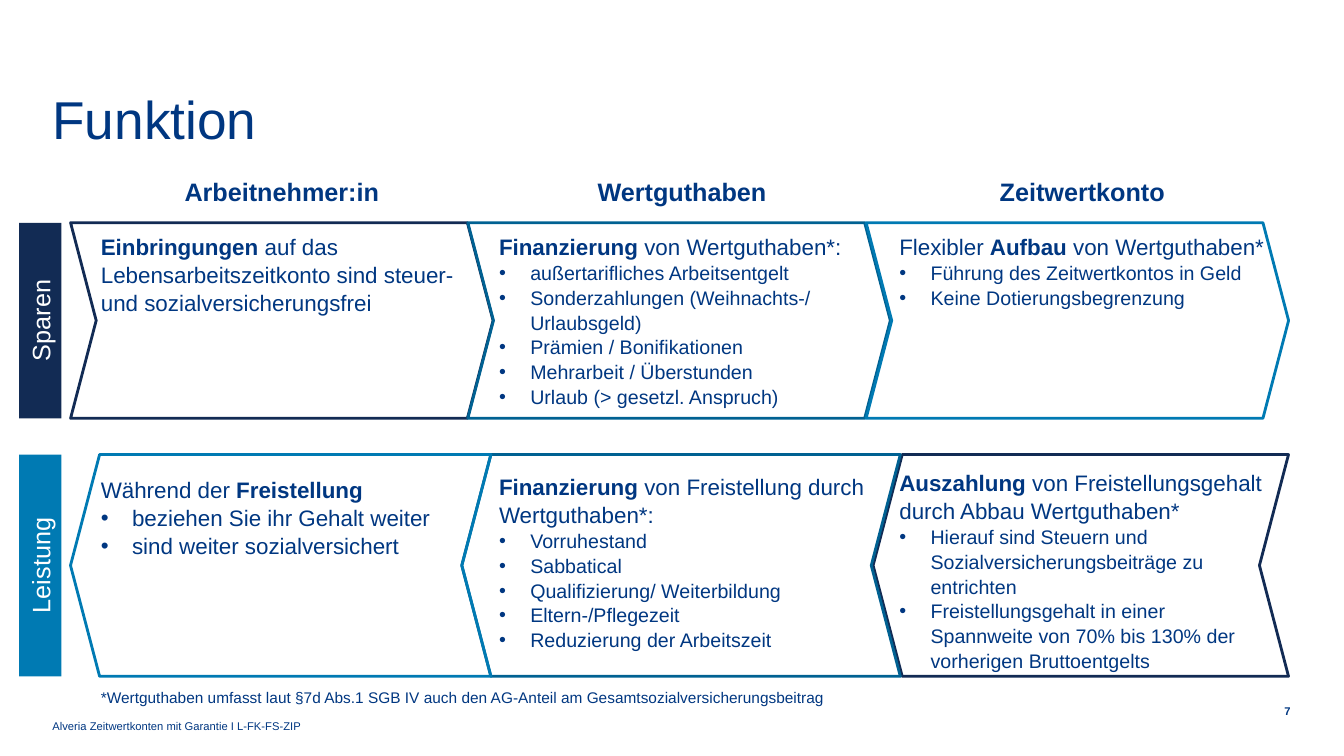
from lxml import etree
from pptx import Presentation
from pptx.dml.color import RGBColor
from pptx.enum.shapes import MSO_SHAPE
from pptx.enum.text import MSO_ANCHOR, PP_ALIGN
from pptx.oxml.ns import qn
from pptx.util import Inches, Pt

TEXT_BLUE = RGBColor(0x00, 0x37, 0x81)
NAVY = RGBColor(0x12, 0x2B, 0x54)
TEAL = RGBColor(0x00, 0x61, 0x92)
SKY = RGBColor(0x00, 0x7A, 0xB3)
WHITE = RGBColor(0xFF, 0xFF, 0xFF)
CHEVRON, RECTANGLE = MSO_SHAPE.CHEVRON, MSO_SHAPE.RECTANGLE
TOP, MIDDLE, BOTTOM = MSO_ANCHOR.TOP, MSO_ANCHOR.MIDDLE, MSO_ANCHOR.BOTTOM
LEFT, CENTER, RIGHT = PP_ALIGN.LEFT, PP_ALIGN.CENTER, PP_ALIGN.RIGHT

prs = Presentation()
prs.slide_width, prs.slide_height = Inches(13.33), Inches(7.5)
slide = prs.slides.add_slide(prs.slide_layouts[6])


def add_box(left, top, width, height, anchor=TOP):
    tf = slide.shapes.add_textbox(
        Inches(left), Inches(top), Inches(width), Inches(height)).text_frame
    tf.word_wrap = True
    tf.vertical_anchor = anchor
    tf.margin_left = tf.margin_right = tf.margin_top = tf.margin_bottom = 0
    return tf


def write(p, text, size=16, color=TEXT_BLUE, align=LEFT, spacing=1.0, bullet=False):
    p.alignment = align
    p.line_spacing = spacing
    if bullet:
        pPr = p._p.get_or_add_pPr()
        pPr.set("marL", str(Inches(0.31)))
        pPr.set("indent", str(-Inches(0.31)))
        etree.SubElement(pPr, qn("a:buFont")).set("typeface", "Arial")
        etree.SubElement(pPr, qn("a:buChar")).set("char", "•")
    for i, part in enumerate(text.split("|")):
        if part:
            r = p.add_run()
            r.text = part
            r.font.name = "Arial"
            r.font.size = Pt(size)
            r.font.bold = i % 2 == 1
            r.font.color.rgb = color


tf = add_box(0.52, 0.96, 10.2, 1.02)
write(tf.paragraphs[0], "Funktion", size=38, spacing=Pt(38))
tf = add_box(12.51, 6.97, 0.29, 0.16, anchor=MIDDLE)
write(tf.paragraphs[0], "|7|", size=8, align=RIGHT, spacing=Pt(10))

columns = [
    (1, 3.59, "Arbeitnehmer:in", [
        (2.3, "|Einbringungen| auf das Lebensarbeitszeitkonto sind steuer- "
              "und sozialversicherungsfrei", 16, []),
        (4.71, "Während der |Freistellung|", 16, [
            "beziehen Sie ihr Gehalt weiter",
            "sind weiter sozialversichert"]),
    ]),
    (4.95, 3.63, "Wertguthaben", [
        (2.3, "|Finanzierung |von Wertguthaben*:", 14, [
            "außertarifliches Arbeitsentgelt",
            "Sonderzahlungen (Weihnachts-/ Urlaubsgeld)",
            "Prämien / Bonifikationen",
            "Mehrarbeit / Überstunden",
            "Urlaub (> gesetzl. Anspruch)"]),
        (4.68, "|Finanzierung |von Freistellung durch Wertguthaben*:", 14, [
            "Vorruhestand",
            "Sabbatical",
            "Qualifizierung/ Weiterbildung",
            "Eltern-/Pflegezeit",
            "Reduzierung der Arbeitszeit"]),
    ]),
    (8.92, 3.63, "Zeitwertkonto", [
        (2.3, "Flexibler |Aufbau| von Wertguthaben*", 14, [
            "Führung des Zeitwertkontos in Geld",
            "Keine Dotierungsbegrenzung"]),
        (4.64, "|Auszahlung |von Freistellungsgehalt durch Abbau Wertguthaben*", 14, [
            "Hierauf sind Steuern und Sozialversicherungsbeiträge zu entrichten",
            "Freistellungsgehalt in einer Spannweite von 70% bis 130% der "
            "vorherigen Bruttoentgelts"]),
    ]),
]
for left, width, heading, blocks in columns:
    tf = add_box(left, 1.73, width, 0.3)
    write(tf.paragraphs[0], f"|{heading}|", size=18, align=CENTER, spacing=1.05)
    for top, lead, bullet_size, bullets in blocks:
        tf = add_box(left, top, width, 1.8)
        write(tf.paragraphs[0], lead, spacing=1.05)
        for bullet in bullets:
            write(tf.add_paragraph(), bullet, size=bullet_size, spacing=1.05, bullet=True)

rows = [
    ("Sparen", NAVY, 2.21, 1.94, False,
     [(0.7, 4.19, NAVY), (4.64, 4.19, TEAL), (8.59, 4.19, SKY)]),
    ("Leistung", SKY, 4.51, 2.2, True,
     [(8.66, 4.12, NAVY), (4.58, 4.35, TEAL), (0.7, 4.17, SKY)]),
]
label_center, label_width = 0.4, 0.42
for label, label_color, top, height, flipped, chevrons in rows:
    for left, width, color in chevrons:
        s = slide.shapes.add_shape(
            CHEVRON, Inches(left), Inches(top), Inches(width), Inches(height))
        s.shadow.inherit = False
        s.adjustments[0] = 0.131
        s.fill.background()
        s.line.color.rgb = color
        s.line.width = Pt(2)
        if flipped:
            s._element.spPr.find(qn("a:xfrm")).set("flipH", "1")

    s = slide.shapes.add_shape(
        RECTANGLE, Inches(label_center - height / 2),
        Inches(top + (height - label_width) / 2), Inches(height), Inches(label_width))
    s.rotation = 270
    s.shadow.inherit = False
    s.fill.solid()
    s.fill.fore_color.rgb = label_color
    s.line.fill.background()
    s.text_frame.vertical_anchor = MIDDLE
    write(s.text_frame.paragraphs[0], label, size=18, color=WHITE, align=CENTER)

tf = add_box(1, 6.83, 7.27, 0.09)
write(tf.paragraphs[0], "*Wertguthaben umfasst laut §7d Abs.1 SGB IV auch den AG-Anteil "
      "am Gesamtsozialversicherungsbeitrag", size=11)
tf = add_box(0.52, 6.89, 10.2, 0.38, anchor=BOTTOM)
write(tf.paragraphs[0], "Alveria Zeitwertkonten mit Garantie I L-FK-FS-ZIP", size=8, spacing=0.9)

prs.save("out.pptx")
